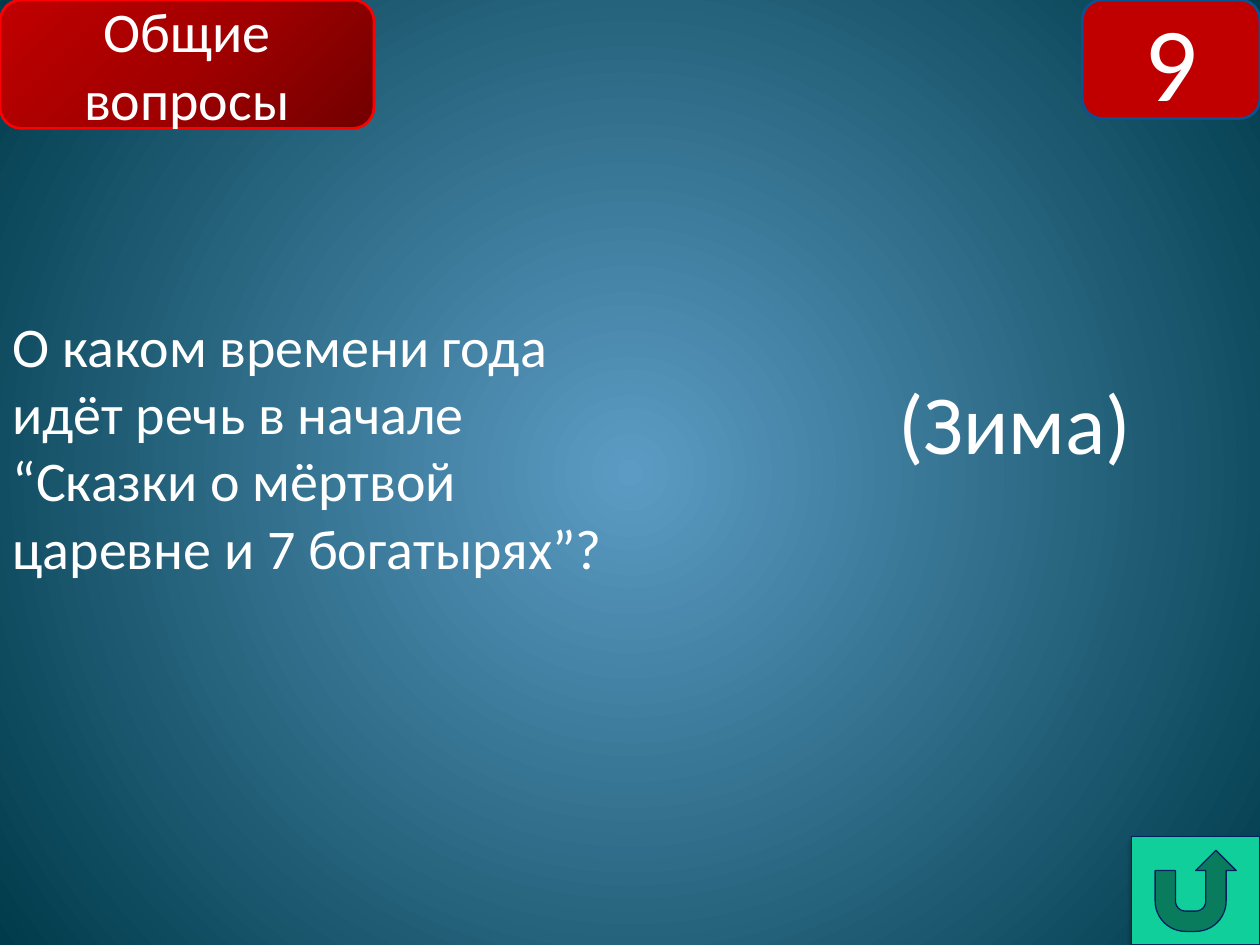
from lxml import etree
from pptx import Presentation
from pptx.dml.color import RGBColor
from pptx.enum import shapes, text
from pptx.oxml.ns import qn
from pptx.util import Cm, Pt

THEME = {
    "font": "Calibri", "text": "FFFFFF",
    "body": 32, "answer": 48, "number": 60,
    "background": [(0, "5C9CC4"), (100, "003B4B")],
    "topic": [(0, "720000"), (50, "A20000"), (100, "C00000")],
    "topic_line": "FF0000",
    "badge": "C00000", "badge_line": "0B5292",
    "button": "10CF9B", "button_line": "002060", "shadow": "000000",
}
WIDTH, HEIGHT = Cm(25.4), Cm(19.05)


def write(sp, content, size, align=text.PP_ALIGN.LEFT,
          anchor=text.MSO_ANCHOR.TOP, wrap=True, fit=text.MSO_AUTO_SIZE.NONE):
    tf = sp.text_frame
    tf.auto_size = fit
    tf.word_wrap = wrap
    tf.vertical_anchor = anchor
    p = tf.paragraphs[0]
    p.alignment = align
    r = p.add_run()
    r.text = content
    r.font.name = THEME["font"]
    r.font.size = Pt(size)
    r.font.color.rgb = RGBColor.from_string(THEME["text"])


def radial_fill(fill, element, stops, focus):
    """Fill with circular stops; focus gives the l, t, r, b insets in percent."""
    fill.gradient()
    grad = next(element.iter(qn("a:gradFill")))
    for child in list(grad):
        grad.remove(child)
    stop_list = etree.SubElement(grad, qn("a:gsLst"))
    for position, color in stops:
        stop = etree.SubElement(stop_list, qn("a:gs"), pos=str(position * 1000))
        etree.SubElement(stop, qn("a:srgbClr"), val=color)
    circle = etree.SubElement(grad, qn("a:path"), {"path": "circle"})
    insets = {side: str(value * 1000) for side, value in zip("ltrb", focus)}
    etree.SubElement(circle, qn("a:fillToRect"), insets)


prs = Presentation()
prs.slide_width, prs.slide_height = WIDTH, HEIGHT
s = prs.slides.add_slide(prs.slide_layouts[5])
radial_fill(s.background.fill, s.element, THEME["background"], (50, 50, 50, 50))

# Question
question = s.shapes.title
question.left, question.top = Cm(0), Cm(6.15)
question.width, question.height = Cm(12.7), Cm(5.74)
write(question, "О каком времени года идёт речь в начале “Сказки о мёртвой царевне и 7 богатырях”?",
      THEME["body"], fit=text.MSO_AUTO_SIZE.SHAPE_TO_FIT_TEXT)

# Return button, topic and number, each set against the slide's edges
button_w, button_h, badge_w = Cm(2.59), Cm(2.18), Cm(3.58)
kinds = shapes.MSO_SHAPE
boxes = [
    (kinds.ACTION_BUTTON_RETURN, WIDTH - button_w, HEIGHT - button_h, button_w, button_h,
     THEME["button"], THEME["button_line"], 0.75),
    (kinds.ROUNDED_RECTANGLE, Cm(0), Cm(0), Cm(7.54), Cm(2.59),
     THEME["topic"], THEME["topic_line"], 1.5),
    (kinds.FLOWCHART_ALTERNATE_PROCESS, WIDTH - badge_w, Cm(0), badge_w, Cm(2.39),
     THEME["badge"], THEME["badge_line"], 1.5),
]
drawn = []
for kind, left, top, width, height, fill, line, line_width in boxes:
    sp = s.shapes.add_shape(kind, left, top, width, height)
    sp.shadow.inherit = False
    if isinstance(fill, list):
        radial_fill(sp.fill, sp.element.spPr, fill, (100, 100, 0, 0))
    else:
        sp.fill.solid()
        sp.fill.fore_color.rgb = RGBColor.from_string(fill)
    sp.line.color.rgb = RGBColor.from_string(line)
    sp.line.width = Pt(line_width)
    drawn.append(sp)
button, topic, badge = drawn

effects = button.element.spPr.find(qn("a:effectLst"))
shadow = etree.SubElement(effects, qn("a:outerShdw"), blurRad=str(Pt(3)), dist=str(Pt(2)),
                          dir="5400000", rotWithShape="0")
shadow_color = etree.SubElement(shadow, qn("a:srgbClr"), val=THEME["shadow"])
etree.SubElement(shadow_color, qn("a:alpha"), val="35000")

for sp, content, size in [(topic, "Общие вопросы", THEME["body"]),
                          (badge, "9", THEME["number"])]:
    write(sp, content, size, align=text.PP_ALIGN.CENTER, anchor=text.MSO_ANCHOR.MIDDLE)

# Answer
answer = s.shapes.add_textbox(Cm(17.86), Cm(7.34), Cm(5.26), Cm(2.31))
write(answer, "(Зима)", THEME["answer"], wrap=False,
      fit=text.MSO_AUTO_SIZE.SHAPE_TO_FIT_TEXT)

prs.save("out.pptx")
